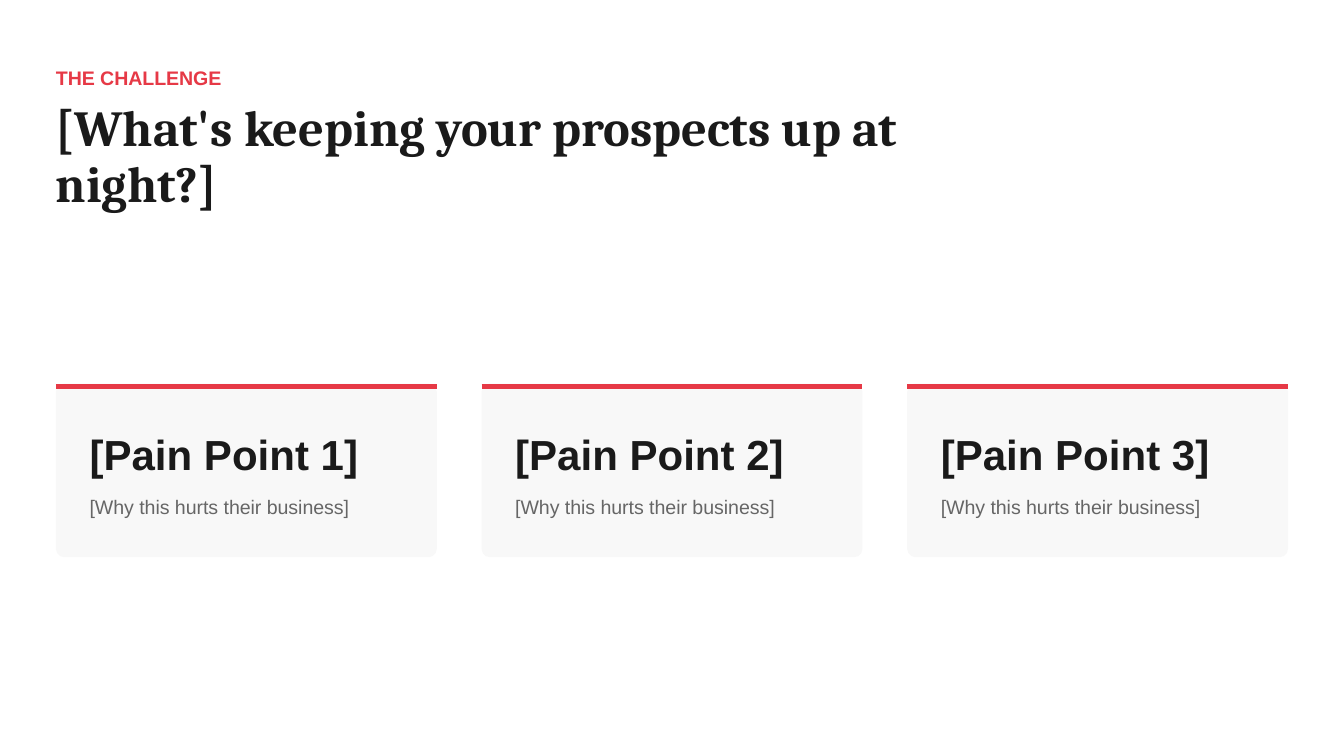
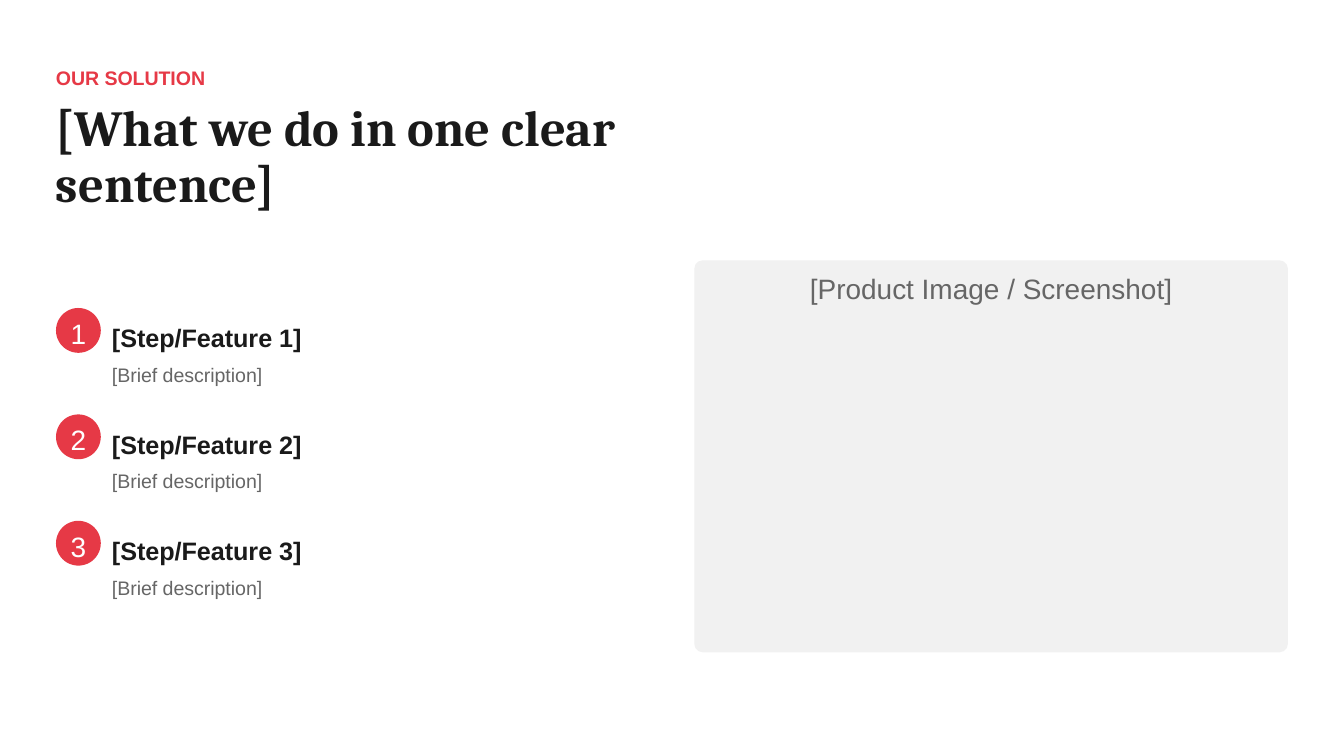
from lxml.etree import SubElement
from pptx import Presentation
from pptx.dml.color import RGBColor
from pptx.enum.shapes import MSO_CONNECTOR as CONN, MSO_SHAPE as SHAPE
from pptx.enum.text import MSO_ANCHOR as ANCHOR, MSO_AUTO_SIZE as AUTO, PP_ALIGN as ALIGN
from pptx.oxml.ns import qn
from pptx.util import Pt

PX = 9525  # EMU in one px, 96 px to the inch
WIDTH, HEIGHT, MARGIN = 960, 540, 40

COLORS = {
    "accent": "E63946", "ink": "1A1A1A", "muted": "666666",
    "white": "FFFFFF", "card": "F8F8F8", "panel": "F1F1F1",
}

# font, size, color, bold, line spacing, space before, space after (points)
STYLES = {
    "kicker": ("Arial", 10.5, "accent", True, 15, 3, 6),
    "title": ("Cambria", 27, "ink", True, 30, 0, 18),
    "card head": ("Arial", 22.5, "ink", True, 27, 3, 6),
    "step head": ("Arial", 13.5, "ink", True, 21, 3, 3),
    "detail": ("Arial", 10.5, "muted", False, 15, 3, 3),
    "number": ("Arial", 15, "white", False, 21, 3, 3),
    "caption": ("Arial", 15, "muted", False, 21, 3, 3),
}

CHALLENGE = {
    "kicker": "THE CHALLENGE",
    "title": "[What's keeping your prospects up at night?]",
    "title width": 707,
    "cards": [
        ("[Pain Point 1]", "[Why this hurts their business]"),
        ("[Pain Point 2]", "[Why this hurts their business]"),
        ("[Pain Point 3]", "[Why this hurts their business]"),
    ],
}
SOLUTION = {
    "kicker": "OUR SOLUTION",
    "title": "[What we do in one clear sentence]",
    "title width": 544,
    "steps": [
        ("[Step/Feature 1]", "[Brief description]"),
        ("[Step/Feature 2]", "[Brief description]"),
        ("[Step/Feature 3]", "[Brief description]"),
    ],
    "caption": "[Product Image / Screenshot]",
}


def rgb(name):
    return RGBColor.from_string(COLORS[name])


def px(*lengths):
    return [round(n * PX) for n in lengths]


def write(sp, text, style, align=ALIGN.LEFT):
    font, size, color, bold, line, before, after = STYLES[style]
    tf = sp.text_frame
    tf.text = text
    tf.word_wrap = True
    tf.auto_size = AUTO.NONE
    tf.vertical_anchor = ANCHOR.TOP
    tf.margin_left = tf.margin_top = tf.margin_right = tf.margin_bottom = 0
    p = tf.paragraphs[0]
    p.alignment = align
    p.line_spacing = Pt(line)
    p.space_before, p.space_after = Pt(before), Pt(after)
    r = p.runs[0]
    r.font.name, r.font.size, r.font.bold = font, Pt(size), bold
    r.font.color.rgb = rgb(color)


def add_text(s, box, text, style, align=ALIGN.LEFT):
    write(s.shapes.add_textbox(*px(*box)), text, style, align)


def add_round_rect(s, box, color, radius):
    sp = s.shapes.add_shape(SHAPE.ROUNDED_RECTANGLE, *px(*box))
    sp.adjustments[0] = radius / min(box[2:])
    sp.fill.solid()
    sp.fill.fore_color.rgb = rgb(color)
    sp.line.fill.background()
    sp.shadow.inherit = False


def add_rule(s, x, y, w):
    line = s.shapes.add_connector(CONN.STRAIGHT, *px(x, y, x + w, y))
    line.line.color.rgb = rgb("accent")
    line.line.width = Pt(3)
    SubElement(line._element.spPr, qn("a:effectLst"))


def add_slide(prs, content):
    """Add a slide with the shared background, kicker and title."""
    s = prs.slides.add_slide(prs.slide_layouts.get_by_name("Title Only"))
    s.background.fill.solid()
    s.background.fill.fore_color.rgb = rgb("white")
    title = s.shapes.title
    title.left, title.top, title.width, title.height = px(
        MARGIN, 72, content["title width"], 40)
    write(title, content["title"], "title")
    add_text(s, (MARGIN, 44, 898, 20), content["kicker"], "kicker")
    return s


def add_cards(s, cards):
    top, gap, pad = 274, 32, 24
    w = (WIDTH - 2 * MARGIN - gap * (len(cards) - 1)) / len(cards)
    for i, (head, detail) in enumerate(cards):
        x = MARGIN + i * (w + gap)
        add_round_rect(s, (x, top, w, 124), "card", 6)
        add_rule(s, x, top + 2, w)
        add_text(s, (x + pad, top + 32, 228, 36), head, "card head")
        add_text(s, (x + pad, top + 76, 228, 20), detail, "detail")


def add_steps(s, steps):
    top, pitch, badge = 220, 76, 32
    x = MARGIN + badge + 8
    for i, (head, detail) in enumerate(steps):
        y = top + i * pitch
        add_round_rect(s, (MARGIN, y, badge, badge), "accent", badge / 2)
        add_text(s, (MARGIN + 10.5, y + 2, 12, 28), str(i + 1), "number")
        add_text(s, (x, y + 4, 139, 28), head, "step head")
        add_text(s, (x, y + 36, 139, 20), detail, "detail")


def add_image_panel(s, caption):
    x, y, w, h = 496, 186, 424, 280
    add_round_rect(s, (x, y, w, h), "panel", 6)
    add_text(s, (x - 4, y + 4, w + 8, 28), caption, "caption", ALIGN.CENTER)


def main():
    prs = Presentation()
    prs.slide_width, prs.slide_height = px(WIDTH, HEIGHT)
    add_cards(add_slide(prs, CHALLENGE), CHALLENGE["cards"])
    s = add_slide(prs, SOLUTION)
    add_steps(s, SOLUTION["steps"])
    add_image_panel(s, SOLUTION["caption"])
    prs.save("out.pptx")


if __name__ == "__main__":
    main()
